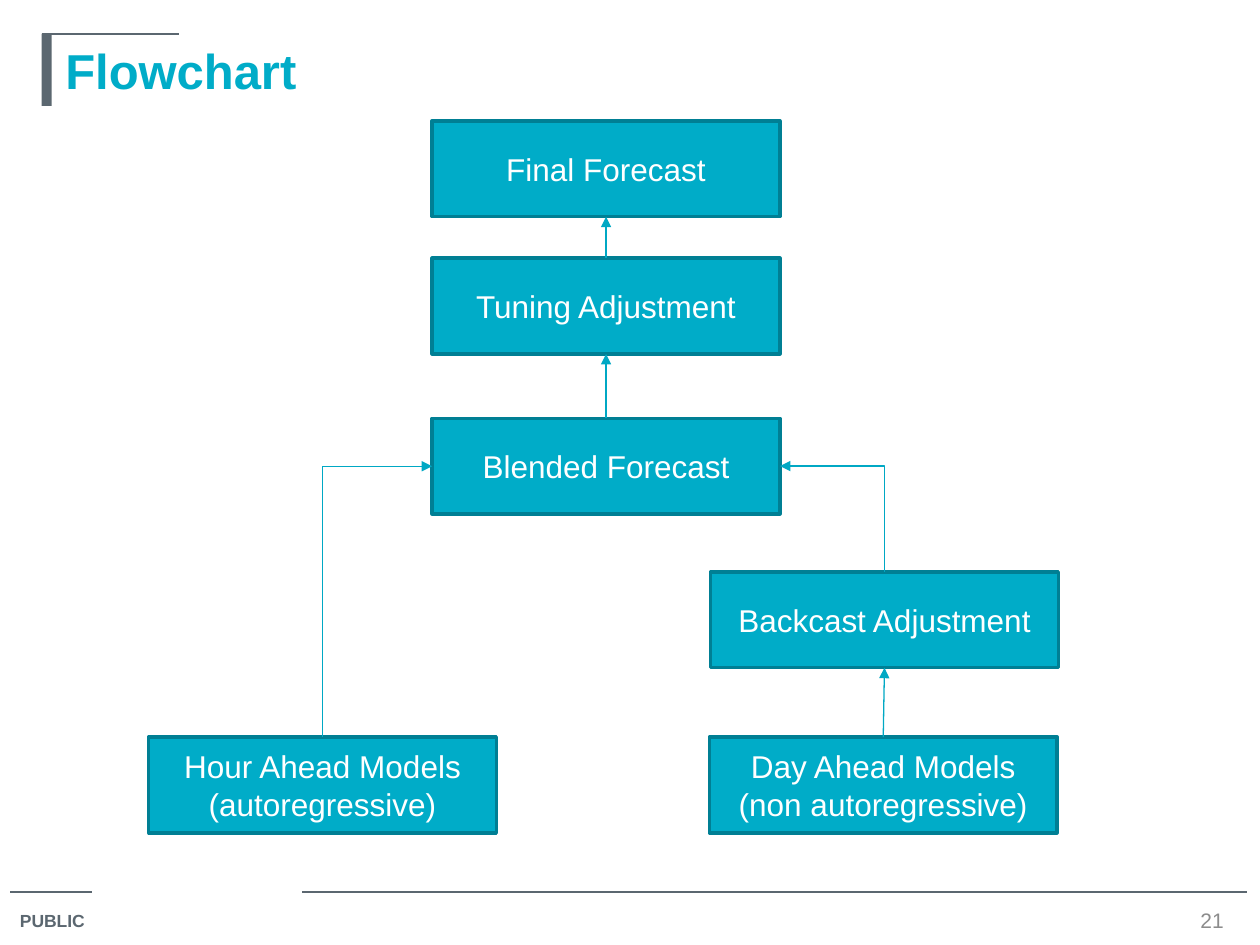
from lxml.etree import SubElement
from pptx import Presentation
from pptx.dml.color import RGBColor
from pptx.enum.shapes import MSO_CONNECTOR, MSO_SHAPE
from pptx.enum.text import MSO_ANCHOR, PP_ALIGN
from pptx.oxml.ns import qn
from pptx.util import Inches, Pt

TEAL = RGBColor(0x00, 0xAC, 0xC8)
DARK_TEAL = RGBColor(0x00, 0x7F, 0x94)
ARROW_TEAL = RGBColor(0x00, 0xA8, 0xC4)
SLATE = RGBColor(0x5B, 0x67, 0x70)
GREY = RGBColor(0x8C, 0x8C, 0x8C)
WHITE = RGBColor(0xFF, 0xFF, 0xFF)

BOX_WIDTH, BOX_HEIGHT = 2.76, 0.76
TOP, LEFT, BOTTOM, RIGHT = range(4)  # connection sites of a rectangle


class FlowchartSlide:
    font_name = "Arial"
    line_width = Pt(0.75)

    def __init__(self, deck):
        self.page = deck.slides.add_slide(deck.slide_layouts[6])
        self.shapes = self.page.shapes

    def set_text(self, shape, lines, size, color, bold=False,
                 align=PP_ALIGN.LEFT, anchor=MSO_ANCHOR.MIDDLE):
        frame = shape.text_frame
        frame.word_wrap = True
        frame.vertical_anchor = anchor
        font_format = {"name": self.font_name, "size": Pt(size), "bold": bold}
        for index, line in enumerate(lines):
            para = frame.add_paragraph() if index else frame.paragraphs[0]
            para.alignment = align
            span = para.add_run()
            span.text = line
            for key, value in font_format.items():
                setattr(span.font, key, value)
            span.font.color.rgb = color

    def label(self, place, text, size, color, **layout):
        box = self.shapes.add_textbox(*map(Inches, place))
        self.set_text(box, [text], size, color, **layout)

    def rectangle(self, place, fill, outline=None):
        shape = self.shapes.add_shape(MSO_SHAPE.RECTANGLE, *map(Inches, place))
        shape.shadow.inherit = False
        shape.fill.solid()
        shape.fill.fore_color.rgb = fill
        if outline is None:
            shape.line.fill.background()
        else:
            shape.line.color.rgb = outline
            shape.line.width = Pt(2)
        return shape

    def step(self, left, top, *lines):
        box = self.rectangle((left, top, BOX_WIDTH, BOX_HEIGHT), TEAL, DARK_TEAL)
        self.set_text(box, lines, 18, WHITE, align=PP_ALIGN.CENTER)
        return box

    def line(self, ends, color, kind=MSO_CONNECTOR.STRAIGHT):
        connector = self.shapes.add_connector(kind, *map(Inches, ends))
        connector.line.color.rgb = color
        connector.line.width = self.line_width
        SubElement(connector._element.spPr, qn("a:effectLst"))
        return connector

    def arrow(self, source, target, site=BOTTOM):
        """Point from the top of source to a site of target, with one bend if sideways."""
        straight = site == BOTTOM
        kind = MSO_CONNECTOR.STRAIGHT if straight else MSO_CONNECTOR.ELBOW
        connector = self.line((0, 0, 1, 1), ARROW_TEAL, kind)
        connector.begin_connect(source, TOP)
        connector.end_connect(target, site)
        outline = connector._element.spPr.find(qn("a:ln"))
        SubElement(outline, qn("a:tailEnd"), type="triangle")
        if not straight:
            self.bend_up_then_across(connector)

    def bend_up_then_across(self, connector):
        """Turn the elbow a quarter left so that it leaves its start upwards."""
        across, rise = connector.width, connector.height
        goes_left = connector.end_x < connector.begin_x
        properties = connector._element.spPr
        properties.find(qn("a:prstGeom")).set("prst", "bentConnector2")
        frame = properties.find(qn("a:xfrm"))
        for key, value in {"rot": "16200000", "flipH": "0",
                           "flipV": str(int(goes_left))}.items():
            frame.set(key, value)
        shift = (rise - across) // 2
        position = {"left": connector.left - shift, "top": connector.top + shift,
                    "width": rise, "height": across}
        for key, value in position.items():
            setattr(connector, key, value)


def main():
    deck = Presentation()
    deck.slide_width, deck.slide_height = Inches(10), Inches(7.5)
    slide = FlowchartSlide(deck)

    for ends in ((0.08, 7.08, 0.73, 7.08), (2.4, 7.08, 9.9, 7.08),
                 (0.33, 0.27, 1.42, 0.27)):
        slide.line(ends, SLATE)
    slide.rectangle((0.33, 0.27, 0.08, 0.57), SLATE)
    slide.label((0.42, 0.27, 9.25, 0.57), "Flowchart", 28, TEAL, bold=True)
    slide.label((0.06, 7.17, 0.77, 0.28), "PUBLIC", 10, SLATE, bold=True,
                anchor=MSO_ANCHOR.TOP)
    slide.label((9.33, 7.18, 0.58, 0.24), "21", 12, GREY, align=PP_ALIGN.CENTER)

    center = 3.43
    final = slide.step(center, 0.96, "Final Forecast")
    tuning = slide.step(center, 2.05, "Tuning Adjustment")
    blended = slide.step(center, 3.32, "Blended Forecast")
    backcast = slide.step(5.64, 4.54, "Backcast Adjustment")
    hour_ahead = slide.step(1.18, 5.85, "Hour Ahead Models", "(autoregressive)")
    day_ahead = slide.step(5.63, 5.85, "Day Ahead Models", "(non autoregressive)")

    slide.arrow(tuning, final)
    slide.arrow(blended, tuning)
    slide.arrow(day_ahead, backcast)
    slide.arrow(backcast, blended, RIGHT)
    slide.arrow(hour_ahead, blended, LEFT)

    deck.save("out.pptx")


if __name__ == "__main__":
    main()
